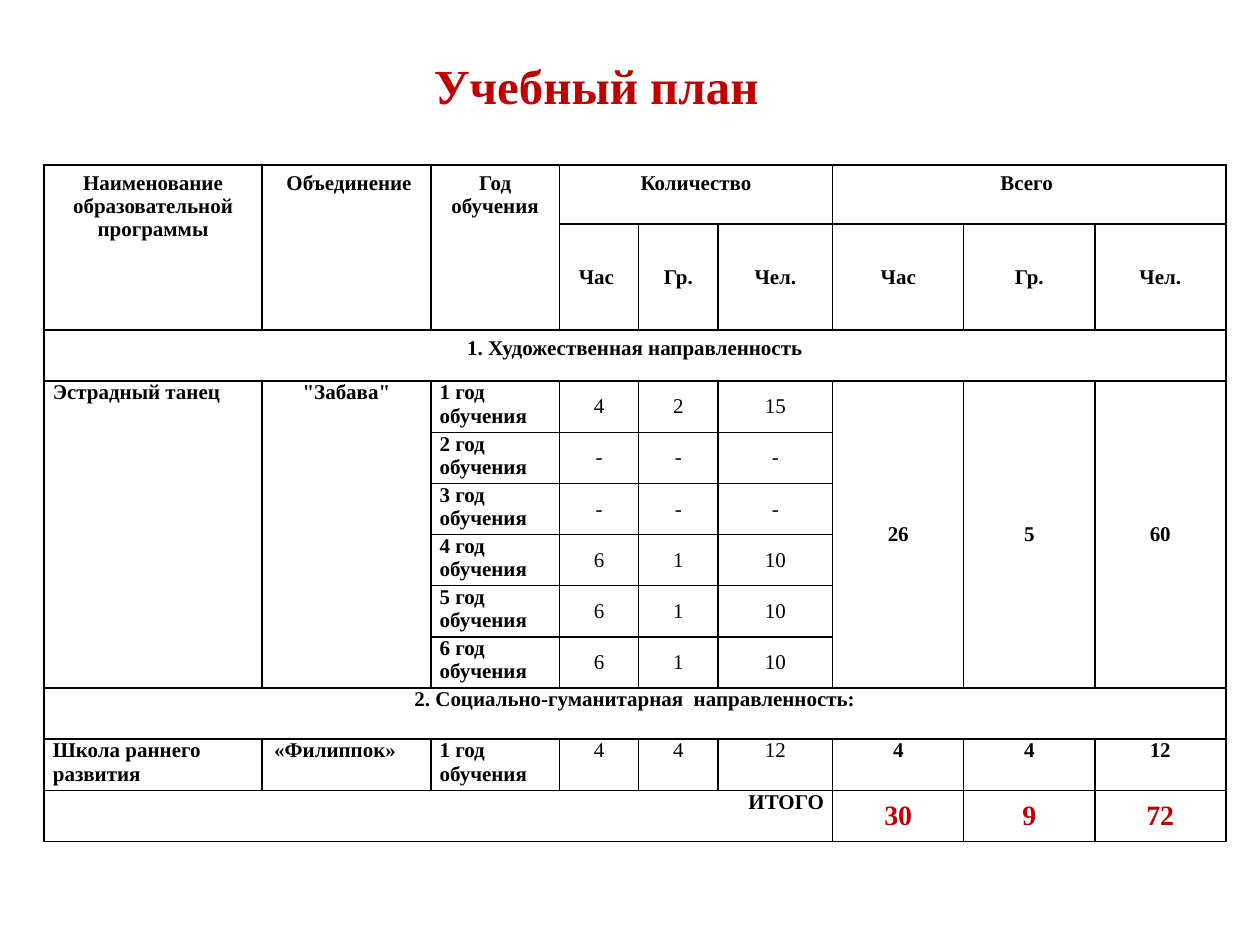
"""Build the curriculum slide with its table of hours, groups and pupils."""
from lxml.etree import SubElement
from pptx import Presentation
from pptx.dml.color import RGBColor
from pptx.enum.text import MSO_ANCHOR, PP_ALIGN
from pptx.oxml import parse_xml
from pptx.oxml.ns import nsdecls, qn
from pptx.util import Inches, Pt

BLACK = RGBColor(0x00, 0x00, 0x00)
RED = RGBColor(0xC0, 0x00, 0x00)

COLUMN_WIDTHS = [1.73, 1.34, 1.02, 0.63, 0.63, 0.91, 1.04, 1.04, 1.04]
ROW_HEIGHTS = [0.47, 0.84] + [4.06 / 10] * 10
TIGHT = {"margin_left": Inches(0.07), "margin_right": Inches(0.07),
         "margin_top": 0, "margin_bottom": 0}
MIDDLE = {**TIGHT, "vertical_anchor": MSO_ANCHOR.MIDDLE}
NAME_OFFSET = {**TIGHT, "margin_right": Inches(0.25)}
LEFT = {"align": PP_ALIGN.LEFT}
PLAIN = {"bold": False}
TOTAL = {"size": 16, "color": RED}

YEAR_COUNTS = [("4", "2", "15"), ("-", "-", "-"), ("-", "-", "-"),
               ("6", "1", "10"), ("6", "1", "10"), ("6", "1", "10")]


class SlideBuilder:
    """Hold the deck style and the current slide."""

    font_name = "Times New Roman"

    def __init__(self, deck):
        self.slide = deck.slides.add_slide(deck.slide_layouts[5])

    def fill_text(self, frame, text, size=12, bold=True, color=BLACK, align=PP_ALIGN.CENTER):
        frame.text = text
        font_values = {"name": self.font_name, "size": Pt(size), "bold": bold}
        for para in frame.paragraphs:
            para.alignment = align
            for span in para.runs:
                for name, value in font_values.items():
                    setattr(span.font, name, value)
                span.font.color.rgb = color

    def title(self, text, left, top, width, height):
        box = self.slide.shapes.title
        lengths = {"left": left, "top": top, "width": width, "height": height}
        for name, value in lengths.items():
            setattr(box, name, Inches(value))
        box.text_frame.vertical_anchor = MSO_ANCHOR.MIDDLE
        self.fill_text(box.text_frame, text, size=28, color=RED)

    def table(self, left, top, widths, heights):
        frame = self.slide.shapes.add_table(
            len(heights), len(widths), Inches(left), Inches(top),
            Inches(sum(widths)), Inches(sum(heights)))
        self.grid = frame.table
        for column, width in zip(self.grid.columns, widths):
            column.width = Inches(width)
        for row, height in zip(self.grid.rows, heights):
            row.height = Inches(height)
        for cell in self.grid.iter_cells():
            cell.fill.background()
            self.border(cell)

    def border(self, cell):
        properties = cell._tc.get_or_add_tcPr()
        for index, side in enumerate(("lnL", "lnR", "lnT", "lnB")):
            line = parse_xml(f'<a:{side} {nsdecls("a")} w="{Pt(1)}"/>')
            fill = SubElement(line, qn("a:solidFill"))
            SubElement(fill, qn("a:srgbClr"), val=str(BLACK))
            properties.insert(index, line)

    def cell(self, row, column, text, layout=None, rows=1, columns=1, **style):
        cell = self.grid.cell(row, column)
        if rows > 1 or columns > 1:
            cell.merge(self.grid.cell(row + rows - 1, column + columns - 1))
        for name, value in (layout or {}).items():
            setattr(cell, name, value)
        self.fill_text(cell.text_frame, text, **style)

    def row(self, row, first_column, texts, layout=None, **style):
        for column, text in enumerate(texts, first_column):
            self.cell(row, column, text, layout, **style)


def main():
    deck = Presentation()
    deck.slide_width, deck.slide_height = Inches(10), Inches(7.5)
    page = SlideBuilder(deck)
    page.title("Учебный план ", 0.28, 0.29, 9, 0.77)
    page.table(0.35, 1.31, COLUMN_WIDTHS, ROW_HEIGHTS)

    headings = ["Наименование\nобразовательной\nпрограммы", " Объединение", "Год обучения"]
    page.row(0, 0, headings, rows=2)
    page.cell(0, 3, "Количество", columns=3)
    page.cell(0, 6, "Всего ", columns=3)
    page.row(1, 3, ["Час ", "Гр.", "Чел.", "Час", "Гр.", "Чел."], MIDDLE)

    page.cell(2, 0, "1. Художественная направленность", columns=9)
    page.cell(3, 0, "Эстрадный танец", TIGHT, rows=6, **LEFT)
    page.cell(3, 1, '"Забава"', TIGHT, rows=6)
    for year, counts in enumerate(YEAR_COUNTS, 1):
        page.cell(year + 2, 2, f"{year} год обучения", TIGHT, **LEFT)
        page.row(year + 2, 3, counts, MIDDLE, **PLAIN)
    page.row(3, 6, ["26", "5", "60"], MIDDLE, rows=6)

    page.cell(9, 0, "2. Социально-гуманитарная  направленность:", TIGHT, columns=9)
    page.cell(10, 0, "Школа раннего развития", TIGHT, **LEFT)
    page.cell(10, 1, "«Филиппок»", NAME_OFFSET)
    page.cell(10, 2, "1 год обучения", TIGHT, **LEFT)
    page.row(10, 3, ["4", "4", "12"], TIGHT, **PLAIN)
    page.row(10, 6, ["4", "4", "12"], TIGHT)

    page.cell(11, 0, "ИТОГО", TIGHT, columns=6, align=PP_ALIGN.RIGHT)
    page.row(11, 6, ["30", "9", "72"], MIDDLE, **TOTAL)
    deck.save("out.pptx")


if __name__ == "__main__":
    main()
